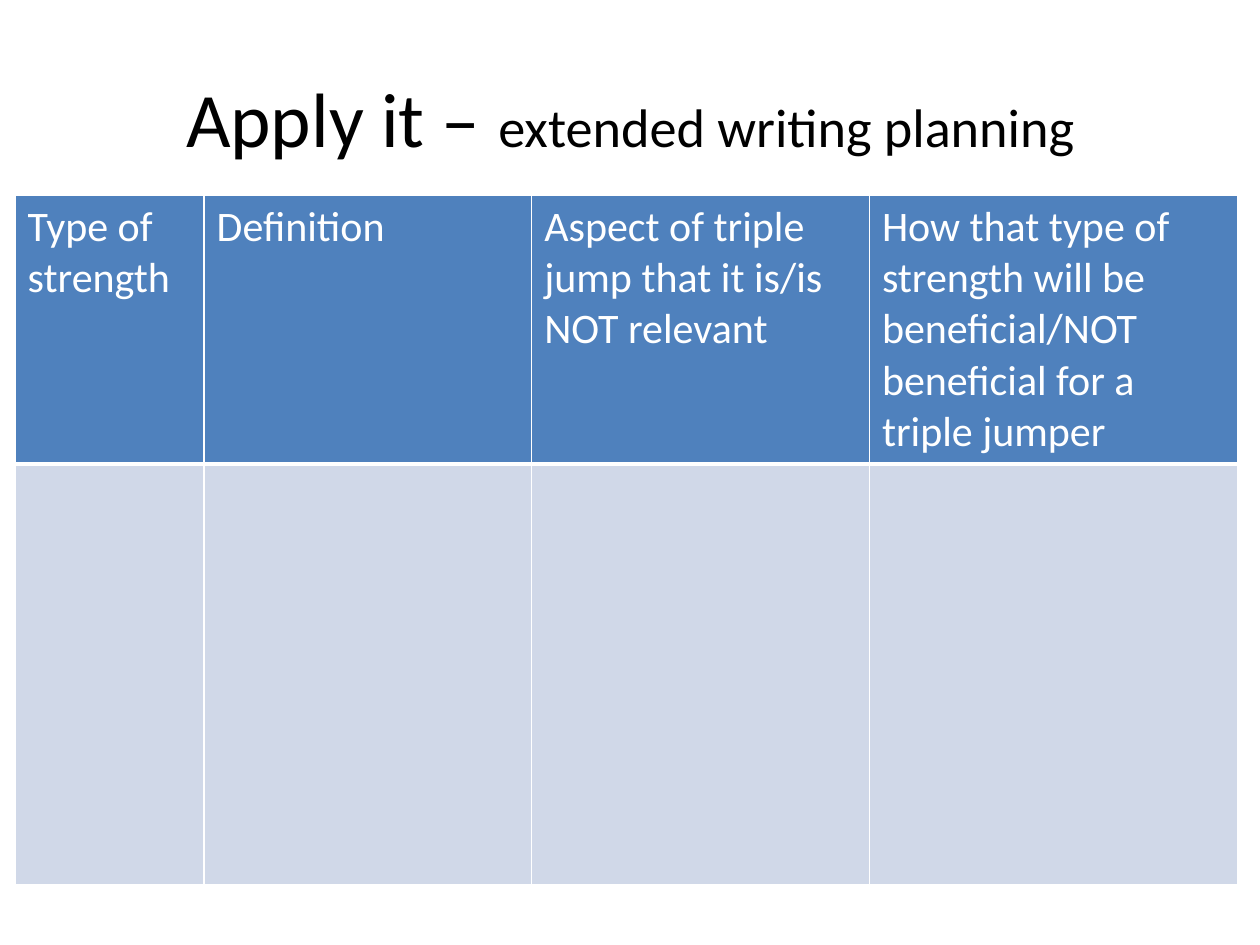
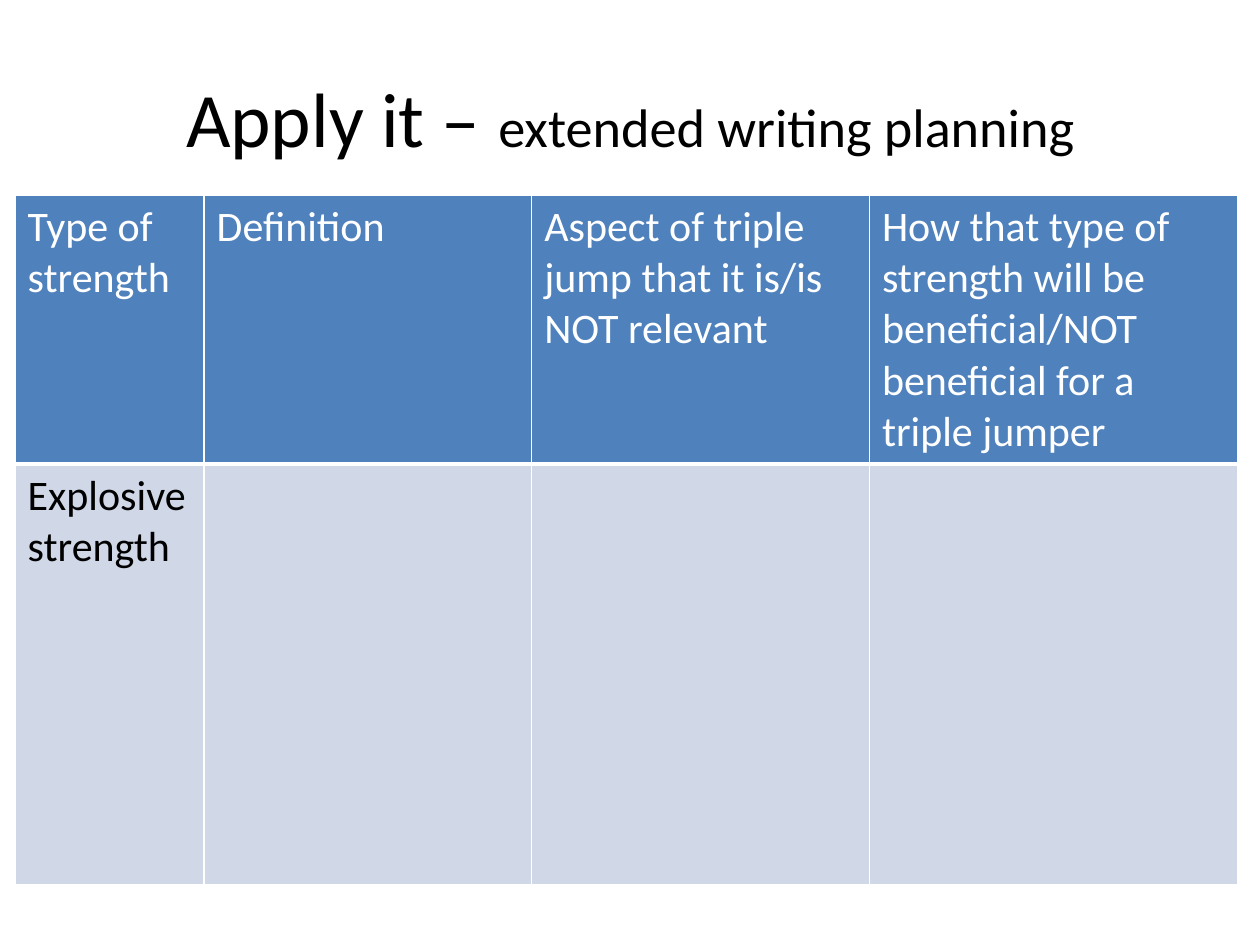
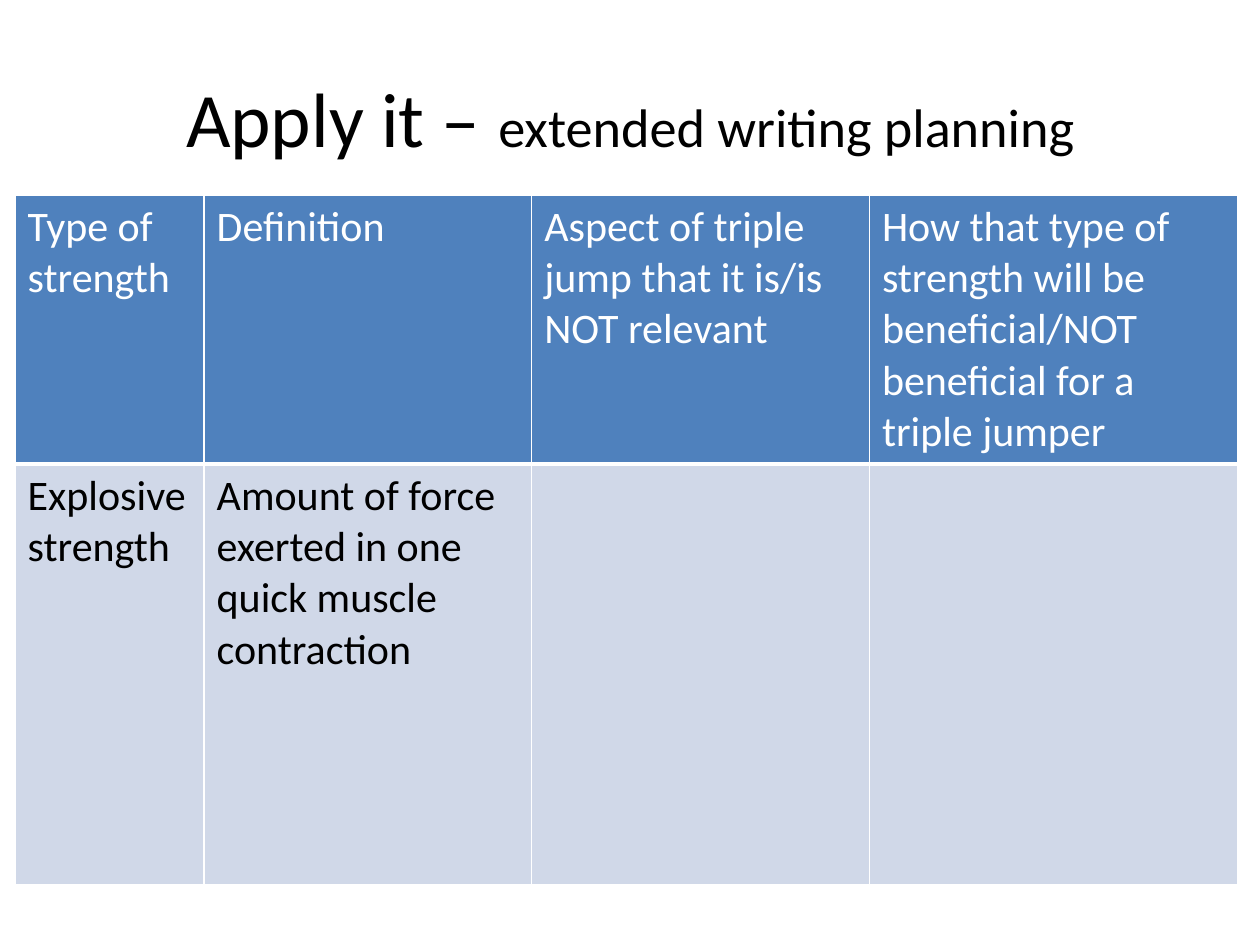
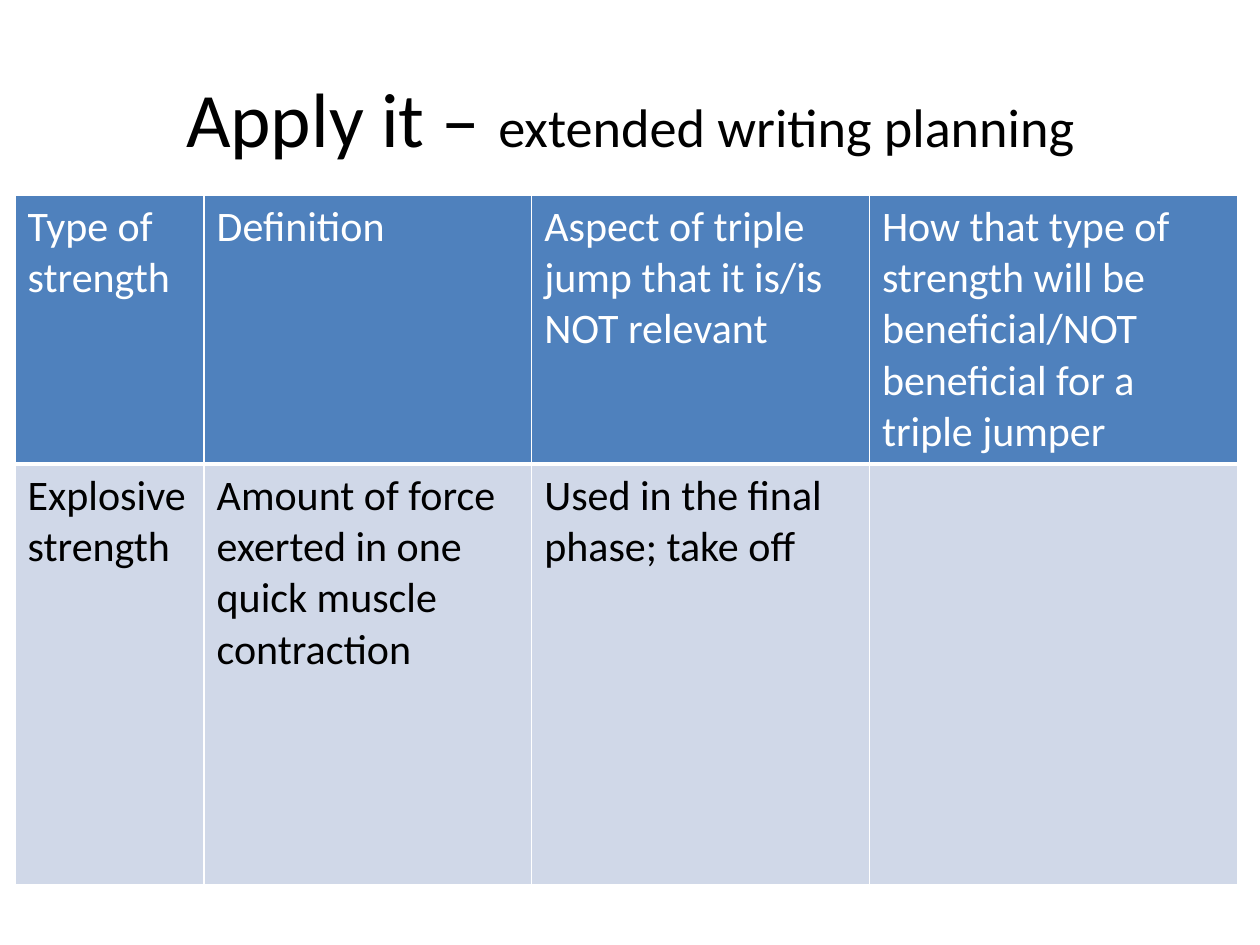
from dataclasses import dataclass

import pptx
import pptx.dml.color
import pptx.enum.text
import pptx.oxml
import pptx.oxml.ns
import pptx.presentation
import pptx.slide
import pptx.table
import pptx.text.text
import pptx.util

Inches = pptx.util.Inches
RGBColor = pptx.dml.color.RGBColor


@dataclass(frozen=True)
class Theme:
    font: str = "Calibri"
    text: str = "000000"
    heading_text: str = "FFFFFF"
    heading_fill: str = "4F81BD"
    answer_fill: str = "D0D8E8"
    rule: str = "FFFFFF"
    title_size: float = 44
    subtitle_size: float = 31
    table_size: float = 24
    thin_rule: float = 1
    thick_rule: float = 3


@dataclass(frozen=True)
class RowStyle:
    height: float
    fill: str
    text: str
    bottom_rule: float


@dataclass(frozen=True)
class Column:
    heading: str
    width: float
    answer: str = ""


THEME = Theme()
HEADING_ROW = RowStyle(2.13, THEME.heading_fill, THEME.heading_text, THEME.thick_rule)
ANSWER_ROW = RowStyle(3.34, THEME.answer_fill, THEME.text, THEME.thin_rule)
COLUMNS = (
    Column("Type of strength", 1.5, "Explosive strength"),
    Column("Definition", 2.6, "Amount of force exerted in one quick muscle contraction"),
    Column("Aspect of triple jump that it is/is NOT relevant", 2.68,
           "Used in the final phase; take off"),
    Column("How that type of strength will be beneficial/NOT beneficial for a triple jumper",
           2.92),
)


def add_run(paragraph: pptx.text.text._Paragraph, words: str, size: float, color: str) -> None:
    run = paragraph.add_run()
    run.text = words
    run.font.name = THEME.font
    run.font.size = pptx.util.Pt(size)
    run.font.bold = False
    run.font.color.rgb = RGBColor.from_string(color)


def add_title(slide: pptx.slide.Slide) -> None:
    title = slide.shapes.title
    title.left, title.top = Inches(0.5), Inches(0.3)
    title.width, title.height = Inches(9), Inches(1.25)
    title.text_frame.vertical_anchor = pptx.enum.text.MSO_ANCHOR.MIDDLE
    heading = title.text_frame.paragraphs[0]
    heading.alignment = pptx.enum.text.PP_ALIGN.CENTER
    add_run(heading, "Apply it – ", THEME.title_size, THEME.text)
    add_run(heading, "extended writing planning", THEME.subtitle_size, THEME.text)


def set_borders(cell: pptx.table._Cell, bottom_rule: float) -> None:
    properties = cell._tc.get_or_add_tcPr()
    for side in "LRTB":
        width = pptx.util.Pt(bottom_rule if side == "B" else THEME.thin_rule)
        properties.append(pptx.oxml.parse_xml(
            f'<a:ln{side} {pptx.oxml.ns.nsdecls("a")} w="{width}"><a:solidFill>'
            f'<a:srgbClr val="{THEME.rule}"/></a:solidFill></a:ln{side}>'))


def fill_cell(cell: pptx.table._Cell, words: str, style: RowStyle) -> None:
    set_borders(cell, style.bottom_rule)
    cell.fill.solid()
    cell.fill.fore_color.rgb = RGBColor.from_string(style.fill)
    if words:
        add_run(cell.text_frame.paragraphs[0], words, THEME.table_size, style.text)


def add_planning_table(slide: pptx.slide.Slide, answers_shown: int) -> None:
    styles = (HEADING_ROW, ANSWER_ROW)
    planner = slide.shapes.add_table(
        len(styles), len(COLUMNS), Inches(0.12), Inches(1.55),
        Inches(sum(column.width for column in COLUMNS)),
        Inches(sum(style.height for style in styles))).table
    planner.horz_banding = False
    for row, style in zip(planner.rows, styles):
        row.height = Inches(style.height)
    for index, column in enumerate(COLUMNS):
        planner.columns[index].width = Inches(column.width)
        answer = column.answer if index < answers_shown else ""
        fill_cell(planner.cell(0, index), column.heading, HEADING_ROW)
        fill_cell(planner.cell(1, index), answer, ANSWER_ROW)


def main() -> None:
    deck = pptx.Presentation()
    deck.slide_width, deck.slide_height = Inches(10), Inches(7.5)
    title_only = deck.slide_layouts.get_by_name("Title Only")
    # Each slide reveals one more answer than the one before.
    for answers_shown in range(len(COLUMNS)):
        slide = deck.slides.add_slide(title_only)
        add_title(slide)
        add_planning_table(slide, answers_shown)
    deck.save("out.pptx")


if __name__ == "__main__":
    main()
